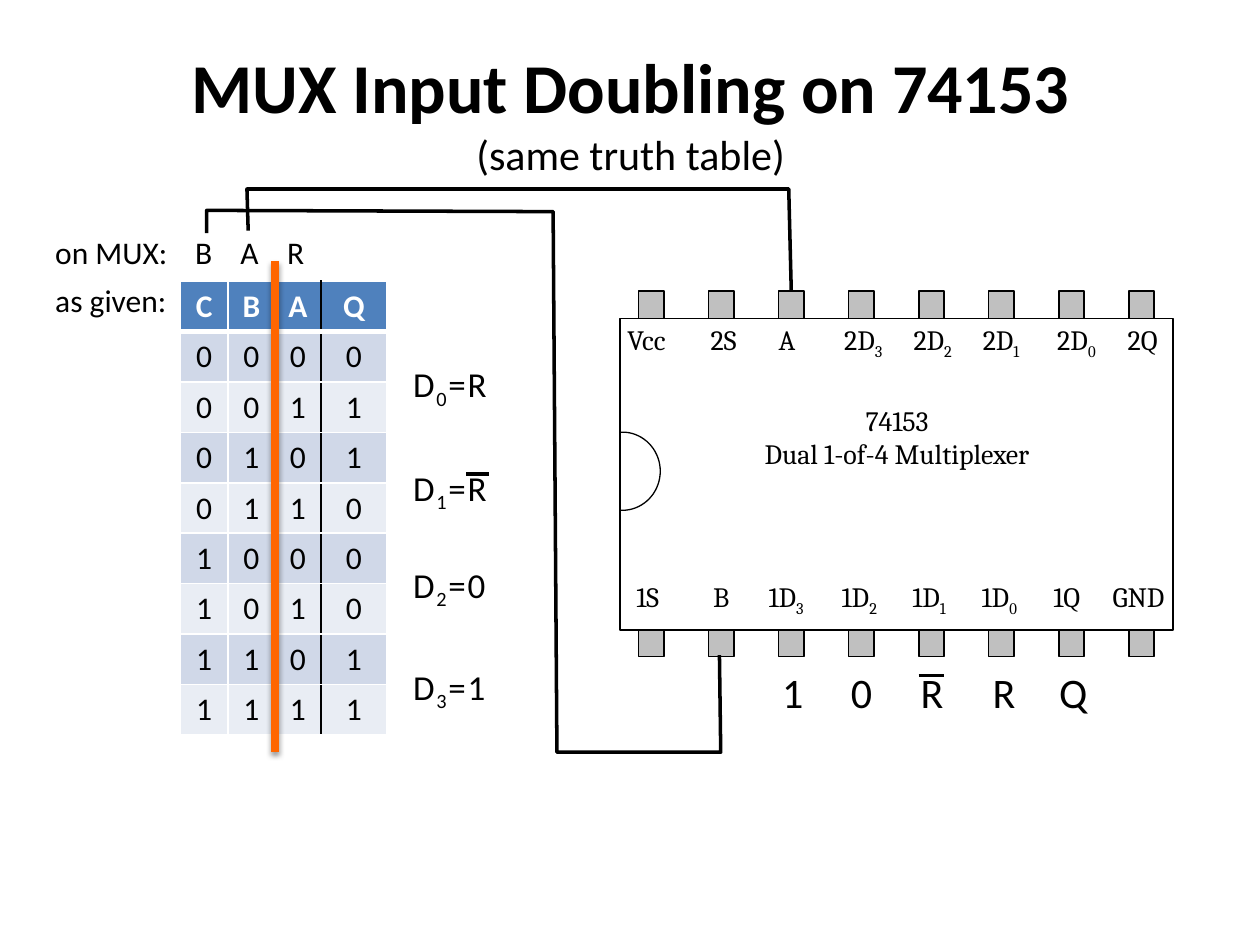
import math
from dataclasses import dataclass

import lxml.etree
import pptx
import pptx.dml.color
import pptx.enum.shapes
import pptx.enum.text
import pptx.oxml
import pptx.oxml.ns
import pptx.util

Inches = pptx.util.Inches
Pt = pptx.util.Pt
qn = pptx.oxml.ns.qn
CENTER = pptx.enum.text.PP_ALIGN.CENTER


@dataclass(frozen=True)
class Theme:
    body_font: str = "Calibri"
    chip_font: str = "Cambria"
    zero_font: str = "Times New Roman"
    ink: str = "000000"
    paper: str = "FFFFFF"
    pin: str = "C0C0C0"
    header: str = "4F81BD"
    bands: tuple = ("D0D8E8", "E9EDF4")
    divider: str = "FF6600"
    title_size: int = 40
    large_size: int = 24
    equation_size: int = 20
    table_size: int = 18
    chip_size: int = 16
    thin: float = 0.75
    wire: float = 2
    thick: float = 4.5


THEME = Theme()
TRUTH_ROWS = ["CBAQ", "0000", "0011", "0101", "0110", "1000", "1010", "1101", "1111"]
TOP_LABELS = [("Vcc", 4.98), ("2S", 5.64), ("A", 6.18), ("2D_3", 6.7),
              ("2D_2", 7.25), ("2D_1", 7.8), ("2D_0", 8.39), ("2Q", 8.95)]
BOTTOM_LABELS = [("1S", 5.05), ("B", 5.66), ("1D_3", 6.1), ("1D_2", 6.68),
                 ("1D_1", 7.24), ("1D_0", 7.79), ("1Q", 8.36), ("GND", 8.83)]


def rgb(color):
    return pptx.dml.color.RGBColor.from_string(color)


def add_run(paragraph, text, size, font=THEME.body_font, color=THEME.ink, bold=False):
    run = paragraph.add_run()
    run.text = text
    run.font.size = Pt(size)
    run.font.name = font
    run.font.bold = bold
    run.font.color.rgb = rgb(color)
    return run


def add_subscripted(paragraph, text, size, font, spacing=0):
    head, _, rest = text.partition("_")
    for piece, is_subscript in ((head, False), (rest[:1], True), (rest[1:], False)):
        if not piece:
            continue
        zero_on_chip = is_subscript and piece == "0" and font == THEME.chip_font
        run = add_run(paragraph, piece, size, THEME.zero_font if zero_on_chip else font)
        properties = run._r.get_or_add_rPr()
        if is_subscript:
            properties.set("baseline", "-25000")
        if spacing:
            properties.set("spc", str(spacing * 100))


def add_text_box(shapes, left, top, width, height, wrap=True, inset=True):
    box = shapes.add_textbox(Inches(left), Inches(top), Inches(width), Inches(height))
    frame = box.text_frame
    frame.word_wrap = wrap
    if not inset:
        frame.margin_left = frame.margin_right = frame.margin_top = frame.margin_bottom = 0
    return frame


def set_tabs(paragraph, positions, alignment):
    properties = paragraph._p.get_or_add_pPr()
    tabs = lxml.etree.SubElement(properties, qn("a:tabLst"))
    for position in positions:
        lxml.etree.SubElement(tabs, qn("a:tab"), pos=str(Inches(position)), algn=alignment)


def add_rectangle(shapes, left, top, width, height, fill):
    shape = shapes.add_shape(pptx.enum.shapes.MSO_SHAPE.RECTANGLE,
                             Inches(left), Inches(top), Inches(width), Inches(height))
    shape.shadow.inherit = False
    shape.fill.solid()
    shape.fill.fore_color.rgb = rgb(fill)
    shape.line.color.rgb = rgb(THEME.ink)
    shape.line.width = Pt(THEME.thin)


def add_line(shapes, start, end, color, width):
    line = shapes.add_connector(pptx.enum.shapes.MSO_CONNECTOR.STRAIGHT,
                                *(Inches(value) for value in start + end))
    line.line.color.rgb = rgb(color)
    line.line.width = Pt(width)
    return lxml.etree.SubElement(line._element.spPr, qn("a:effectLst"))


def add_outline(shapes, points, width):
    points = [(Inches(x), Inches(y)) for x, y in points]
    builder = shapes.build_freeform(*points[0])
    builder.add_line_segments(points[1:], close=False)
    shape = builder.convert_to_shape()
    shape.shadow.inherit = False
    shape.fill.background()
    shape.line.color.rgb = rgb(THEME.ink)
    shape.line.width = Pt(width)


def add_title(slide):
    frame = add_text_box(slide.shapes, 1.3, 0.3, 7.41, 1.18)
    title = frame.paragraphs[0]
    add_run(title, "MUX Input Doubling on 74153", THEME.title_size, bold=True)
    subtitle = frame.add_paragraph()
    add_run(subtitle, "(same truth table)", THEME.large_size)
    title.alignment = subtitle.alignment = CENTER


def add_chip(slide):
    shapes = slide.shapes.add_group_shape().shapes
    for index in range(8):
        add_rectangle(shapes, 5.07 + index * 3.89 / 7, 2.31, 0.2, 2.9, THEME.pin)
    add_rectangle(shapes, 4.92, 2.53, 4.39, 2.47, THEME.paper)
    for labels, top in ((TOP_LABELS, 2.56), (BOTTOM_LABELS, 4.6)):
        for text, left in labels:
            frame = add_text_box(shapes, left, top, 0.55, 0.36, inset=False)
            add_subscripted(frame.paragraphs[0], text, THEME.chip_size, THEME.chip_font)
    angles = [math.radians(degree) for degree in range(-90, 91, 5)]
    arc = [(4.94 + 0.3 * math.cos(angle), 3.74 + 0.31 * math.sin(angle)) for angle in angles]
    add_outline(shapes, [(4.92, 3.43), *arc, (4.92, 4.05)], THEME.thin)
    frame = add_text_box(shapes, 5.72, 3.15, 2.8, 1.28)
    for paragraph, text in ((frame.paragraphs[0], "74153"),
                            (frame.add_paragraph(), "Dual 1-of-4 Multiplexer")):
        paragraph.alignment = CENTER
        add_run(paragraph, text, THEME.chip_size, THEME.chip_font)


def set_borders(cell, colors, bottom_width):
    properties = cell._tc.get_or_add_tcPr()
    for index, (side, color) in enumerate(zip("LRTB", colors)):
        width = bottom_width if side == "B" else 1
        border = lxml.etree.Element(qn("a:ln" + side), w=str(Pt(width)))
        fill = lxml.etree.SubElement(border, qn("a:solidFill"))
        lxml.etree.SubElement(fill, qn("a:srgbClr"), val=color)
        properties.insert(index, border)


def add_truth_table(slide):
    table = slide.shapes.add_table(len(TRUTH_ROWS), 4, Inches(1.43), Inches(2.23),
                                   Inches(1.64), Inches(3.6)).table
    for column, width in zip(table.columns, (0.38, 0.37, 0.37, 0.52)):
        column.width = Inches(width)
    for row, values in enumerate(TRUTH_ROWS):
        is_header = row == 0
        for column, value in enumerate(values):
            cell = table.cell(row, column)
            cell.fill.solid()
            cell.fill.fore_color.rgb = rgb(THEME.header if is_header else THEME.bands[(row - 1) % 2])
            paragraph = cell.text_frame.paragraphs[0]
            paragraph.alignment = CENTER
            add_run(paragraph, value, THEME.table_size,
                    color=THEME.paper if is_header else THEME.ink, bold=is_header)
            left = THEME.ink if column == 3 else THEME.paper
            right = THEME.ink if column == 2 else THEME.paper
            set_borders(cell, (left, right, THEME.paper, THEME.paper),
                        3 if is_header or False else 1)


def add_input_names(slide):
    frame = add_text_box(slide.shapes, 0.34, 1.8, 2.24, 0.79)
    for paragraph, text in ((frame.paragraphs[0], "on MUX:\tB\tA\tR"),
                            (frame.add_paragraph(), "as given:")):
        paragraph.space_after = Pt(6)
        add_run(paragraph, text, THEME.table_size)
    set_tabs(frame.paragraphs[0], (1.11, 1.47, 1.84), "l")


def add_equations(slide):
    for text, top in (("D_0=R", 2.83), ("D_1=R", 3.65), ("D_2=0", 4.42), ("D_3=1", 5.23)):
        frame = add_text_box(slide.shapes, 3.18, top, 0.81, 0.44, wrap=False)
        add_subscripted(frame.paragraphs[0], text, THEME.equation_size, THEME.body_font, spacing=1)
    add_line(slide.shapes, (3.7, 3.76), (3.88, 3.76), THEME.ink, THEME.wire)


def add_divider(slide):
    effects = add_line(slide.shapes, (2.18, 2.07), (2.18, 5.97), THEME.divider, THEME.thick)
    shadow = lxml.etree.SubElement(effects, qn("a:outerShdw"), blurRad=str(Pt(3.1)),
                                   dist=str(Pt(1.6)), dir="5400000", rotWithShape="0")
    color = lxml.etree.SubElement(shadow, qn("a:srgbClr"), val=THEME.ink)
    lxml.etree.SubElement(color, qn("a:alpha"), val="38000")


def add_wires(slide):
    shapes = slide.shapes.add_group_shape().shapes
    add_outline(shapes, [(1.97, 1.83), (1.96, 1.5), (6.26, 1.5), (6.28, 2.31)], THEME.wire)
    add_outline(shapes, [(1.64, 1.85), (1.64, 1.67), (4.39, 1.68), (4.42, 5.97),
                         (5.72, 5.97), (5.71, 5.2)], THEME.wire)


def add_pin_values(slide):
    shapes = slide.shapes.add_group_shape().shapes
    paragraph = add_text_box(shapes, 6.11, 5.24, 2.66, 0.5).paragraphs[0]
    add_run(paragraph, "1\t0\tR\tR\tQ", THEME.large_size)
    set_tabs(paragraph, (0.63, 1.19, 1.76, 2.31), "ctr")
    add_line(shapes, (7.29, 5.36), (7.49, 5.36), THEME.ink, THEME.wire)


def main():
    presentation = pptx.Presentation()
    presentation.slide_width, presentation.slide_height = Inches(10), Inches(7.5)
    slide = presentation.slides.add_slide(presentation.slide_layouts[6])
    for add_part in (add_title, add_chip, add_truth_table, add_input_names,
                     add_equations, add_divider, add_wires, add_pin_values):
        add_part(slide)
    presentation.save("out.pptx")


if __name__ == "__main__":
    main()
